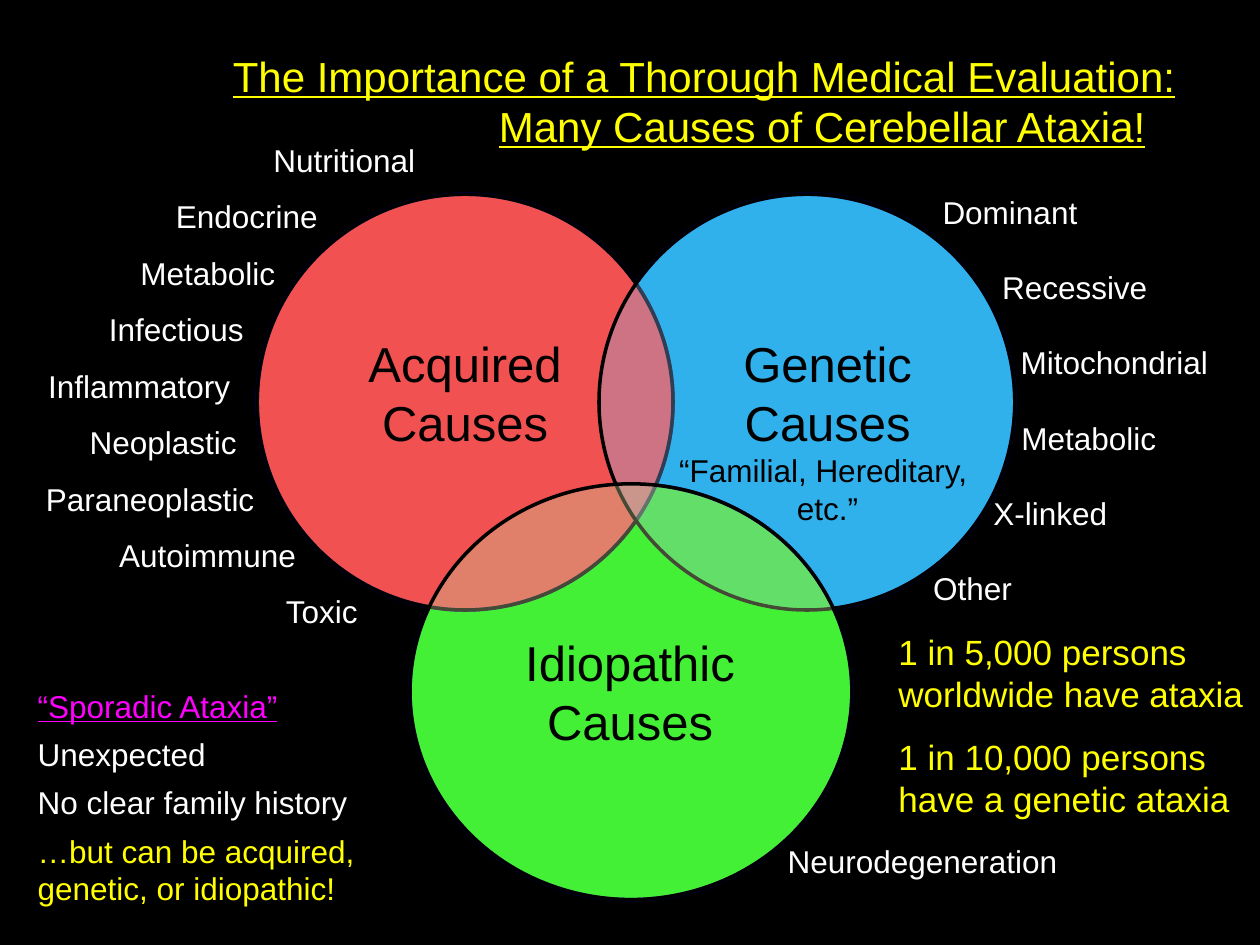
from lxml import etree
from pptx import Presentation
from pptx.dml.color import RGBColor
from pptx.enum.shapes import MSO_SHAPE
from pptx.enum.text import MSO_AUTO_SIZE, PP_ALIGN
from pptx.oxml.ns import qn
from pptx.util import Pt

OVAL = MSO_SHAPE.OVAL
FIT = MSO_AUTO_SIZE.SHAPE_TO_FIT_TEXT
LEFT, CENTER = PP_ALIGN.LEFT, PP_ALIGN.CENTER
BLACK, WHITE, YELLOW, MAGENTA = "000000", "FFFFFF", "FFFF00", "FF00FF"
NAVY = "0000BD"


def rgb(value):
    return RGBColor.from_string(value)


def add_text(box, lines, align=LEFT, wrap=False):
    """Write lines of (text, size, colour, underline, space after); return the paragraphs."""
    frame = slide.shapes.add_textbox(*[Pt(v) for v in box]).text_frame
    frame.word_wrap = wrap
    frame.auto_size = FIT
    paragraphs = []
    for i, (text, size, color, underline, after) in enumerate(lines):
        paragraph = frame.add_paragraph() if i else frame.paragraphs[0]
        paragraph.alignment = align
        if after:
            paragraph.space_after = Pt(after)
        run = paragraph.add_run()
        run.text = text
        run.font.name = "Arial"
        run.font.size = Pt(size)
        run.font.underline = underline
        run.font.color.rgb = rgb(color)
        paragraphs.append(paragraph)
    return paragraphs


prs = Presentation()
prs.slide_width, prs.slide_height = Pt(720), Pt(540)
slide = prs.slides.add_slide(prs.slide_layouts[6])
slide.background.fill.solid()
slide.background.fill.fore_color.rgb = rgb(BLACK)

title_lines = add_text((126, 25.2, 558.7, 65.5), [
    ("The Importance of a Thorough Medical Evaluation:", 24, YELLOW, True, 0),
    ("Many Causes of Cerebellar Ataxia!", 24, YELLOW, True, 0),
])
title_lines[1]._p.get_or_add_pPr().set("marL", str(Pt(152)))

# Solid circles first, then translucent tints that show the overlaps
acquired = (147, 111, 237.6, 237.6)
genetic = (342.3, 111, 237.6, 237.6)
idiopathic = (234.3, 276.5, 252.5, 237.6)
circles = [
    (genetic, "00B0F0", NAVY, 100),
    (idiopathic, "00FF00", NAVY, 100),
    (acquired, "FF2D2D", NAVY, 100),
    (acquired, "D99694", BLACK, 35),
    (genetic, "8EB4E3", BLACK, 35),
    (idiopathic, "C3D69B", BLACK, 35),
]
for box, fill, outline, opacity in circles:
    circle = slide.shapes.add_shape(OVAL, *[Pt(v) for v in box])
    circle.shadow.inherit = False
    circle.fill.solid()
    circle.fill.fore_color.rgb = rgb(fill)
    circle.line.color.rgb = rgb(outline)
    circle.line.width = Pt(2)
    if opacity < 100:
        fill_color = circle._element.spPr.find(qn("a:solidFill"))[0]
        etree.SubElement(fill_color, qn("a:alpha"), val=str(opacity * 1000))

# Causes around the circles: first top, step, then (name, left, width)
cause_columns = [
    (77, 32.25, [
        ("Nutritional", 149.2, 105), ("Endocrine", 93.4, 104),
        ("Metabolic", 73.2, 99), ("Infectious", 55.2, 100),
        ("Inflammatory", 20.4, 129), ("Neoplastic", 44.1, 107),
        ("Paraneoplastic", 19.2, 144), ("Autoimmune", 61, 125),
        ("Toxic", 156.3, 60),
    ]),
    (106.6, 43.05, [
        ("Dominant", 531.5, 99), ("Recessive", 565.5, 104),
        ("Mitochondrial", 576.2, 134), ("Metabolic", 576.6, 99),
        ("X-linked", 560.6, 85), ("Other", 526.1, 63),
    ]),
    (477.6, 0, [("Neurodegeneration", 443, 181)]),
]
for top, step, causes in cause_columns:
    for row, (cause, left, width) in enumerate(causes):
        add_text((left, top + row * step, width, 29), [(cause, 18, WHITE, False, 0)])

circle_titles = [
    ("Acquired", (202.4, 187.2, 126.7, 75), []),
    ("Genetic", (380, 187.2, 185.8, 119), ["“Familial, Hereditary, ", "etc.”"]),
    ("Idiopathic", (292, 357.8, 136, 75), []),
]
for kind, box, details in circle_titles:
    lines = [(text, 28, BLACK, False, 0) for text in (kind, "Causes")]
    lines += [(text, 18, BLACK, False, 0) for text in details]
    add_text(box, lines, CENTER)

add_text((14.4, 388.8, 229.7, 134.6), [
    ("“Sporadic Ataxia”", 18, MAGENTA, True, 6),
    ("Unexpected", 18, WHITE, False, 6),
    ("No clear family history", 18, WHITE, False, 6),
    ("…but can be acquired, genetic, or idiopathic!", 18, YELLOW, False, 6),
], wrap=True)

add_text((506.3, 356.6, 213, 116.6), [
    ("1 in 5,000 persons", 20, YELLOW, False, 0),
    ("worldwide have ataxia", 20, YELLOW, False, 12),
    ("1 in 10,000 persons", 20, YELLOW, False, 0),
    ("have a genetic ataxia", 20, YELLOW, False, 0),
])

prs.save("out.pptx")
